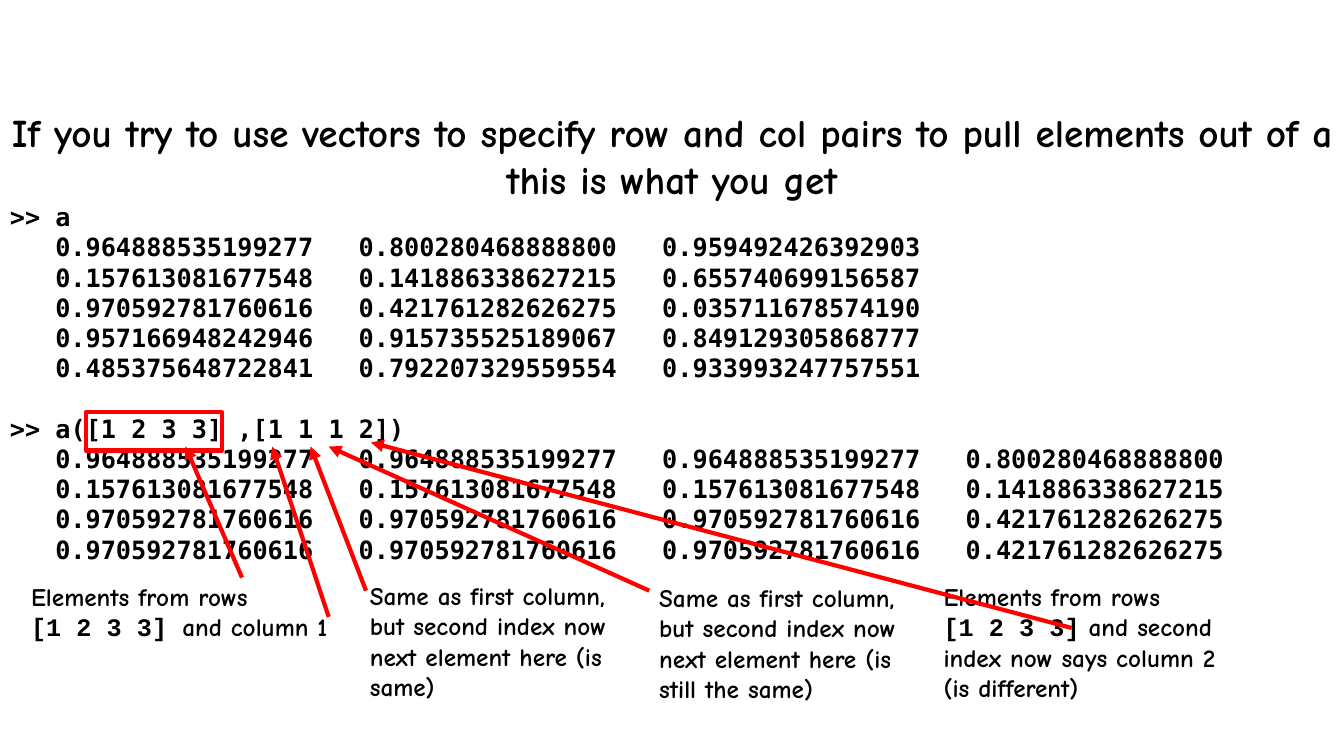
from lxml import etree
from pptx import Presentation
from pptx.dml.color import RGBColor
from pptx.enum.shapes import MSO_CONNECTOR, MSO_SHAPE
from pptx.enum.text import MSO_ANCHOR, MSO_AUTO_SIZE, PP_ALIGN
from pptx.oxml.ns import qn
from pptx.util import Inches, Pt

STRAIGHT = MSO_CONNECTOR.STRAIGHT
RECTANGLE = MSO_SHAPE.RECTANGLE
TOP = MSO_ANCHOR.TOP
NO_FIT = MSO_AUTO_SIZE.NONE
CENTER = PP_ALIGN.CENTER

# Content
HAND, CODE, INDEX = "Comic Neue", "DejaVu Sans Mono", "Courier New"
BLACK, RED = "000000", "FF0000"
TITLE = ("If you try to use vectors to specify row and col pairs "
         "to pull elements out of a this is what you get")
MATRIX = [
    ("0.964888535199277", "0.800280468888800", "0.959492426392903"),
    ("0.157613081677548", "0.141886338627215", "0.655740699156587"),
    ("0.970592781760616", "0.421761282626275", "0.035711678574190"),
    ("0.957166948242946", "0.915735525189067", "0.849129305868777"),
    ("0.485375648722841", "0.792207329559554", "0.933993247757551"),
]
PICKED_ROWS, PICKED_COLUMNS = [1, 2, 3, 3], [1, 1, 1, 2]
# left, top, width, height, paragraphs of (text, font) runs
NOTES = [
    (0.21, 5.72, 3.36, 0.71, [[("Elements from rows", HAND)],
                              [("[1 2 3 3] ", INDEX), ("and column 1", HAND)]]),
    (3.57, 5.71, 2.7, 1.31, [[("Same as first column, but second index now "
                               "next element here (is same)", HAND)]]),
    (6.44, 5.73, 2.7, 1.31, [[("Same as first column, but second index now "
                               "next element here (is still the same)", HAND)]]),
    (9.26, 5.72, 3.22, 1.31, [[("Elements from rows", HAND)],
                              [("[1 2 3 3]", INDEX),
                               (" and second index now says column 2 "
                                "(is different)", HAND)]]),
]
# start x, start y, tip x, tip y
ARROWS = [
    (2.4, 5.73, 1.84, 4.43),
    (3.26, 6.12, 2.7, 4.43),
    (3.63, 5.86, 3.08, 4.43),
    (6.44, 5.86, 3.26, 4.43),
    (10.63, 6.23, 3.68, 4.39),
]
ROW_INDEX_BOX = (0.85, 4.09, 1.35, 0.38)
FIRST_COLUMN, COLUMN_STEP = 0.45, 3.01


def color(value):
    return RGBColor.from_string(value)


def format_run(run, font, size):
    run.font.name = font
    run.font.size = Pt(size)
    run.font.bold = True
    run.font.color.rgb = color(BLACK)


def add_text(slide, box, paragraphs):
    shape = slide.shapes.add_textbox(*map(Inches, box))
    frame = shape.text_frame
    frame.word_wrap = True
    for number, runs in enumerate(paragraphs):
        paragraph = frame.add_paragraph() if number else frame.paragraphs[0]
        for text, font in runs:
            run = paragraph.add_run()
            run.text = text
            format_run(run, font, 18)
    return frame


def add_tab_stops(paragraph, count):
    properties = paragraph._p.get_or_add_pPr()
    stops = etree.SubElement(properties, qn("a:tabLst"))
    for column in range(count):
        position = Inches(FIRST_COLUMN + column * COLUMN_STEP)
        etree.SubElement(stops, qn("a:tab"), pos=str(position), algn="l")


def add_arrow(slide, ends):
    arrow = slide.shapes.add_connector(STRAIGHT, *map(Inches, ends))
    arrow.line.color.rgb = color(RED)
    arrow.line.width = Pt(3)
    etree.SubElement(arrow.line._get_or_add_ln(), qn("a:tailEnd"), type="triangle")
    etree.SubElement(arrow._element.spPr, qn("a:effectLst"))


def matrix_lines(rows):
    return ["\t" + "\t".join(row) for row in rows]


def main():
    presentation = Presentation()
    presentation.slide_width = Inches(13.33)
    presentation.slide_height = Inches(7.5)
    slide = presentation.slides.add_slide(presentation.slide_layouts[5])

    # Title
    title = slide.shapes.title
    title.left, title.top = Inches(0), Inches(1.02)
    title.width, title.height = Inches(13.33), Inches(1.03)
    frame = title.text_frame
    frame.text = TITLE
    frame.word_wrap = True
    frame.auto_size = NO_FIT
    frame.vertical_anchor = TOP
    frame.paragraphs[0].alignment = CENTER
    format_run(frame.paragraphs[0].runs[0], HAND, 28)

    # Session: the matrix, then the result of indexing it
    result = [[MATRIX[row - 1][column - 1] for column in PICKED_COLUMNS]
              for row in PICKED_ROWS]
    call = ">> a([1 2 3 3] ,[1 1 1 2])"
    lines = [">> a", *matrix_lines(MATRIX), call, *matrix_lines(result)]
    session = add_text(slide, (0, 1.95, 13.33, 3.75),
                       [[(line, CODE)] for line in lines])
    for paragraph, line in zip(session.paragraphs, lines):
        if line == call:
            paragraph.space_before = Pt(21.5)
        if line.startswith("\t"):
            add_tab_stops(paragraph, len(PICKED_COLUMNS))

    # Explanations under the columns
    for *box, paragraphs in NOTES:
        add_text(slide, box, paragraphs)

    # Arrows and the frame around the row index
    for ends in ARROWS:
        add_arrow(slide, ends)
    index_frame = slide.shapes.add_shape(RECTANGLE, *map(Inches, ROW_INDEX_BOX))
    index_frame.shadow.inherit = False
    index_frame.fill.background()
    index_frame.line.color.rgb = color(RED)
    index_frame.line.width = Pt(3)

    presentation.save("out.pptx")


if __name__ == "__main__":
    main()
